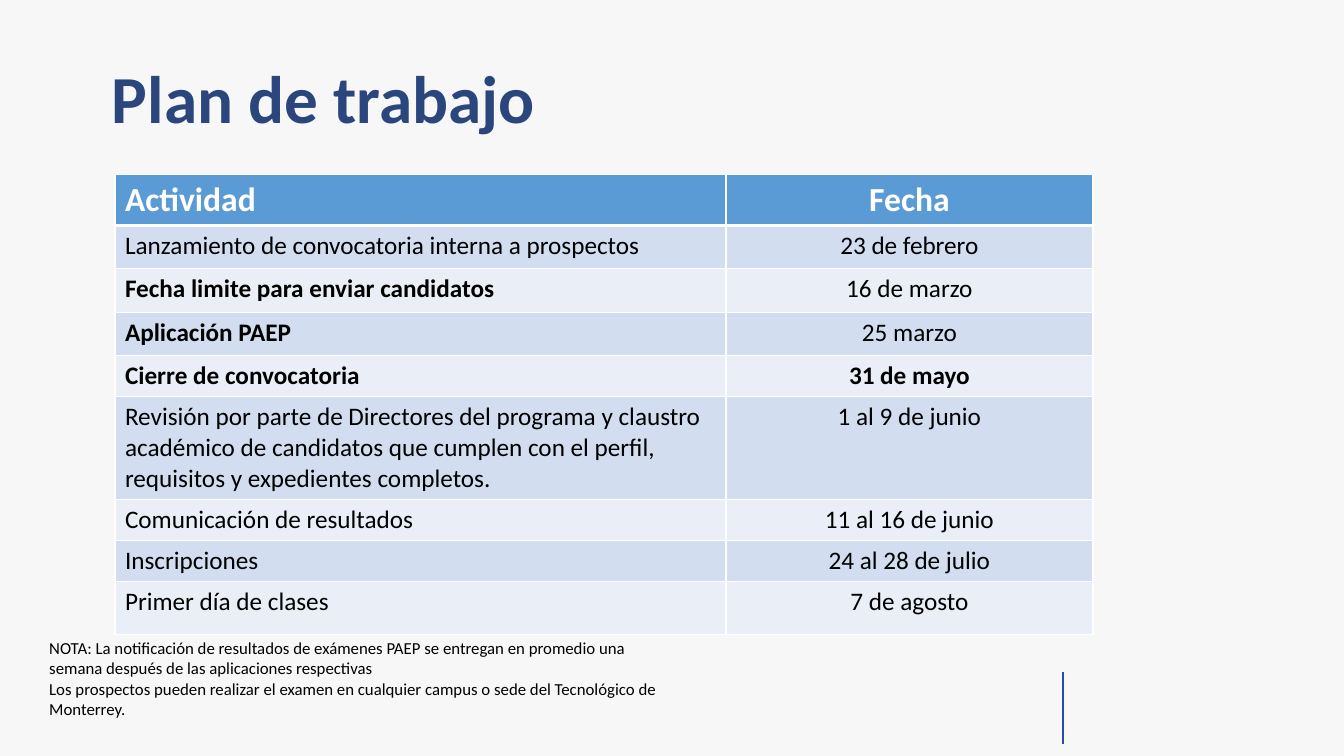
from pptx import Presentation
from pptx.dml.color import RGBColor
from pptx.enum.shapes import MSO_CONNECTOR as Connector
from pptx.enum.text import MSO_ANCHOR as Anchor, PP_ALIGN as Align
from pptx.oxml import parse_xml
from pptx.oxml.ns import nsdecls
from pptx.util import Inches, Pt

COLORS = {
    "background": "F7F7F7",
    "title": "2A467D",
    "accent_line": "2D4BA0",
    "header": "5B9BD5",
    "band_dark": "D2DEEF",
    "band_light": "EAEFF7",
    "white": "FFFFFF",
    "black": "000000",
}
TITLE_ONLY_LAYOUT = 5

# Activity, date, activity in bold, date in bold, row height
SCHEDULE = [
    ("Actividad", "Fecha", True, True, 0.49),
    ("Lanzamiento de convocatoria interna a prospectos", "23 de febrero", False, False, 0.43),
    ("Fecha limite para enviar candidatos", "16 de marzo", True, False, 0.43),
    ("Aplicación PAEP", "25 marzo", True, False, 0.43),
    ("Cierre de convocatoria", "31 de mayo", True, True, 0.41),
    ("Revisión por parte de Directores del programa y claustro académico de candidatos "
     "que cumplen con el perfil, requisitos y expedientes completos.",
     "1 al 9 de junio", False, False, 1.01),
    ("Comunicación de resultados", "11 al 16 de junio", False, False, 0.41),
    ("Inscripciones", "24 al 28 de julio", False, False, 0.41),
    ("Primer día de clases", "7 de agosto", False, False, 0.52),
]
NOTES = [
    "NOTA: La notificación de resultados de exámenes PAEP se entregan en promedio una "
    "semana después de las aplicaciones respectivas",
    "Los prospectos pueden realizar el examen en cualquier campus o sede del "
    "Tecnológico de Monterrey.",
]


def rgb(name):
    return RGBColor.from_string(COLORS[name])


def write_text(paragraph, text, size=18, color="black", bold=False,
               align=Align.LEFT, line_spacing=None, font="Calibri"):
    paragraph.alignment = align
    paragraph.line_spacing = line_spacing
    run = paragraph.add_run()
    run.text = text
    run.font.name = font
    run.font.size = Pt(size)
    run.font.bold = bold
    run.font.color.rgb = rgb(color)


def set_borders(cell, top=1, bottom=1):
    """Give the cell white borders; widths are in points."""
    properties = cell._tc.get_or_add_tcPr()
    widths = {"lnL": 1, "lnR": 1, "lnT": top, "lnB": bottom}
    for position, (side, width) in enumerate(widths.items()):
        properties.insert(position, parse_xml(
            f'<a:{side} {nsdecls("a")} w="{Pt(width)}"><a:solidFill>'
            f'<a:srgbClr val="{COLORS["white"]}"/></a:solidFill></a:{side}>'))


class WorkPlanSlide:
    def __init__(self, presentation):
        self.slide = presentation.slides.add_slide(
            presentation.slide_layouts[TITLE_ONLY_LAYOUT])
        fill = self.slide.background.fill
        fill.solid()
        fill.fore_color.rgb = rgb("background")

    def add_title(self, text, left, top, width, height):
        title = self.slide.shapes.title
        title.left, title.top = Inches(left), Inches(top)
        title.width, title.height = Inches(width), Inches(height)
        title.text_frame.vertical_anchor = Anchor.MIDDLE
        write_text(title.text_frame.paragraphs[0], text, size=48,
                   color="title", bold=True, line_spacing=0.9)

    def add_line(self, x, top, bottom):
        line = self.slide.shapes.add_connector(
            Connector.STRAIGHT, Inches(x), Inches(top), Inches(x), Inches(bottom))
        line.line.color.rgb = rgb("accent_line")
        line.line.width = Pt(1.5)
        line._element.spPr.append(parse_xml(f'<a:effectLst {nsdecls("a")}/>'))

    def add_schedule(self, rows, left, top, column_widths):
        height = sum(row[-1] for row in rows)
        table = self.slide.shapes.add_table(
            len(rows), len(column_widths), Inches(left), Inches(top),
            Inches(sum(column_widths)), Inches(height)).table
        for column, width in zip(table.columns, column_widths):
            column.width = Inches(width)
        for index, (activity, date, activity_bold, date_bold, row_height) in enumerate(rows):
            table.rows[index].height = Inches(row_height)
            is_header = index == 0
            band = "header" if is_header else "band_dark" if index % 2 else "band_light"
            contents = [(activity, activity_bold, Align.LEFT), (date, date_bold, Align.CENTER)]
            for cell, (text, bold, align) in zip(table.rows[index].cells, contents):
                cell.fill.solid()
                cell.fill.fore_color.rgb = rgb(band)
                set_borders(cell, top=3 if index == 1 else 1, bottom=3 if is_header else 1)
                write_text(cell.text_frame.paragraphs[0], text, bold=bold, align=align,
                           size=24 if is_header else 18,
                           color="white" if is_header else "black")

    def add_notes_box(self, texts, left, top, width, height):
        frame = self.slide.shapes.add_textbox(
            Inches(left), Inches(top), Inches(width), Inches(height)).text_frame
        frame.word_wrap = True
        for index, text in enumerate(texts):
            paragraph = frame.add_paragraph() if index else frame.paragraphs[0]
            write_text(paragraph, text, size=12)


def main():
    presentation = Presentation()
    presentation.slide_width = Inches(13.33)
    presentation.slide_height = Inches(7.5)
    plan = WorkPlanSlide(presentation)
    plan.add_line(10.54, 6.67, 7.38)
    plan.add_title("Plan de trabajo", 1.01, 0.28, 11.5, 1.45)
    plan.add_schedule(SCHEDULE, 1.14, 1.73, [6.06, 3.64])
    plan.add_notes_box(NOTES, 0.39, 6.28, 6.37, 0.91)
    presentation.save("out.pptx")


if __name__ == "__main__":
    main()
